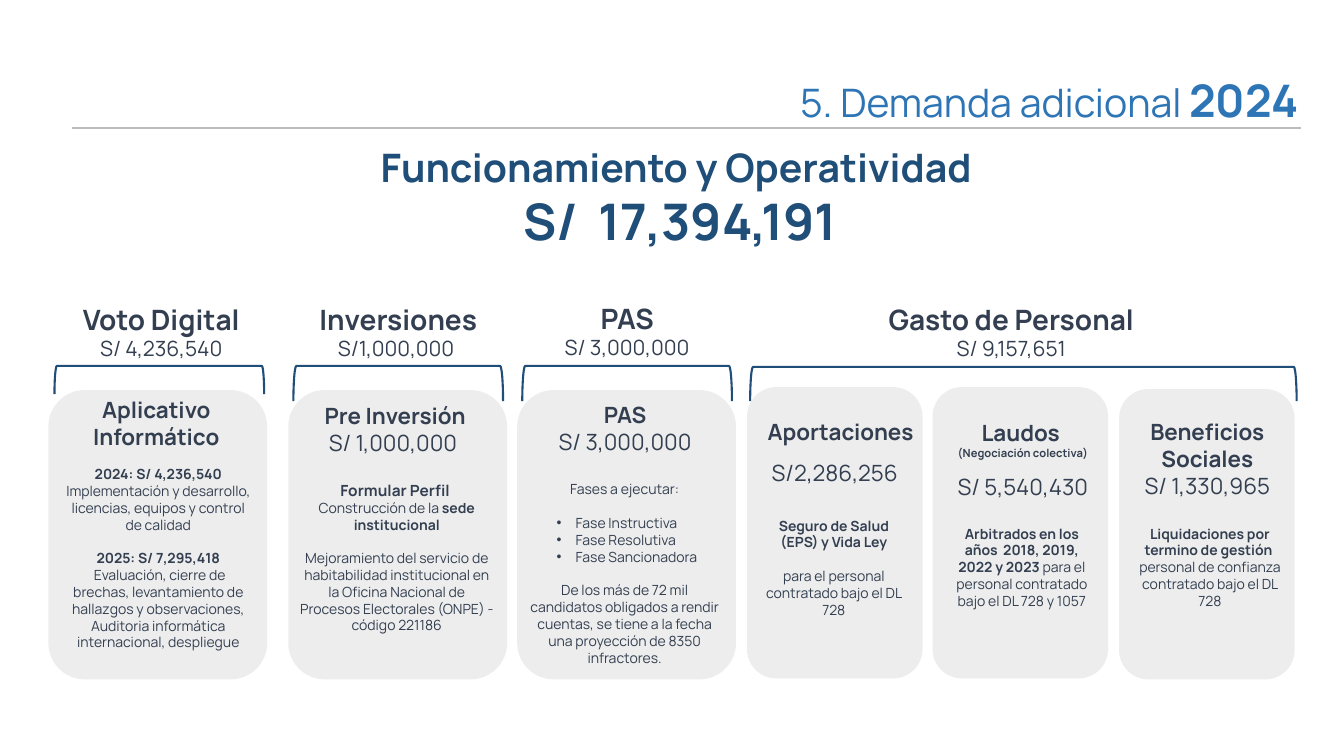
from pptx import Presentation
from pptx.dml.color import RGBColor
from pptx.enum.shapes import MSO_CONNECTOR, MSO_SHAPE
from pptx.enum.text import MSO_ANCHOR, MSO_AUTO_SIZE, PP_ALIGN
from pptx.oxml.ns import qn
from pptx.util import Inches, Pt
from lxml import etree

ROUNDED, BRACKET = MSO_SHAPE.ROUNDED_RECTANGLE, MSO_SHAPE.RIGHT_BRACKET
STRAIGHT = MSO_CONNECTOR.STRAIGHT
CENTER, RIGHT, BULLET = PP_ALIGN.CENTER, PP_ALIGN.RIGHT, PP_ALIGN.LEFT
TOP, NO_FIT = MSO_ANCHOR.TOP, MSO_AUTO_SIZE.NONE
FONT = "Manrope"
BLUE, NAVY, SLATE, CARD_GREY, RULE_GREY = "2E75B6", "1F4E79", "333F50", "EDEDED", "BCBCBC"

# Content. Paragraph: (alignment, space before, [(text, size, bold), ...])
TITLE = [(RIGHT, 0, [("5. Demanda adicional ", 28, False), ("2024", 32, True)])]
TOTAL = [(CENTER, 0, [("Funcionamiento y Operatividad ", 28, True)]),
         (CENTER, 0, [("S/  17,394,191", 36, True)])]

# Group: name, amount, text box, bracket box (left, top, width, height)
GROUPS = [
    ("Voto Digital", "S/ 4,236,540", (0.48, 2.95, 2.24, 0.69), (0.54, 3.63, 2.08, 0.28)),
    ("Inversiones", "S/1,000,000 ", (2.97, 2.95, 1.96, 0.69), (2.91, 3.63, 2.08, 0.35)),
    ("PAS", "S/ 3,000,000", (5.24, 2.94, 1.96, 0.69), (5.18, 3.63, 2.08, 0.35)),
    ("Gasto de Personal", "S/ 9,157,651", (8.06, 2.95, 3.94, 0.69), (7.44, 3.64, 5.42, 0.34)),
]

# Card: outline, heading box, heading, detail box, detail
CARDS = [
    ((0.48, 3.87, 2.17, 2.87),
     (0.49, 3.88, 2.12, 0.64), [(CENTER, 0, [("Aplicativo Informático", 16, True)])],
     (0.52, 4.57, 2.1, 2.12), [
         (CENTER, 0, [("2024: S/ 4,236,540", 10, True)]),
         (CENTER, 0, [("Implementación y desarrollo, licencias, equipos y control de calidad",
                       10, False)]),
         (CENTER, 12, [("2025: S/ 7,295,418", 10, True)]),
         (CENTER, 0, [(" Evaluación, cierre de brechas, levantamiento de hallazgos y "
                       "observaciones, Auditoria informática internacional, despliegue",
                       10, False)])]),
    ((2.86, 3.87, 2.17, 2.87),
     (2.86, 3.94, 2.12, 0.64), [(CENTER, 0, [("Pre Inversión", 16, True)]),
                                (CENTER, 0, [("S/ 1,000,000 ", 16, False)])],
     (2.86, 4.72, 2.15, 2.31), [
         (CENTER, 0, [("Formular Perfil ", 11, True)]),
         (CENTER, 0, [("Construcción de la ", 10, False), ("sede institucional", 10, True)]),
         (CENTER, 12, [("Mejoramiento del servicio de habitabilidad institucional en la Oficina "
                        "Nacional de Procesos Electorales (ONPE) - código 221186", 10, False)])]),
    ((5.13, 3.87, 2.17, 2.87),
     (5.14, 3.93, 2.12, 0.64), [(CENTER, 0, [("PAS", 16, True)]),
                                (CENTER, 0, [("S/ 3,000,000", 16, False)])],
     (5.12, 4.72, 2.15, 1.95), [
         (CENTER, 0, [("Fases a ejecutar:", 10, False)]),
         (BULLET, 12, [("Fase Instructiva", 10, False)]),
         (BULLET, 0, [("Fase Resolutiva", 10, False)]),
         (BULLET, 0, [("Fase Sancionadora", 10, False)]),
         (CENTER, 12, [("De los más de 72 mil candidatos obligados a rendir cuentas, se tiene a "
                        "la fecha una proyección de 8350 infractores.", 10, False)])]),
    ((7.41, 3.84, 1.74, 2.89),
     (7.4, 4.1, 1.76, 0.77), [(RIGHT, 0, [("Aportaciones", 16, True)]),
                              (CENTER, 10, [("S/2,286,256", 16, False)])],
     (7.47, 5.08, 1.6, 1.11), [
         (CENTER, 0, [("Seguro de Salud (EPS) y Vida Ley", 10, True)]),
         (CENTER, 12, [("para el personal contratado bajo el DL 728", 10, False)])]),
    ((9.25, 3.84, 1.74, 2.89),
     (9.32, 4.11, 1.65, 0.91), [(CENTER, 0, [("Laudos ", 16, True)]),
                                (CENTER, 0, [("(Negociación colectiva)", 8, True)]),
                                (CENTER, 10, [("S/ 5,540,430", 16, False)])],
     (9.35, 5.16, 1.57, 1.11), [
         (CENTER, 0, [("Arbitrados en los años  2018, 2019, 2022 y 2023 ", 10, True),
                      ("para el personal contratado bajo el DL 728 y 1057", 10, False)])]),
    ((11.1, 3.86, 1.74, 2.88),
     (11.09, 4.1, 1.77, 0.91), [(CENTER, 0, [("Beneficios Sociales", 16, True)]),
                                (CENTER, 0, [("S/ 1,330,965", 16, False)])],
     (11.13, 5.16, 1.74, 0.94), [
         (CENTER, 0, [("Liquidaciones por termino de gestión ", 10, True)]),
         (CENTER, 0, [("personal de confianza contratado bajo el DL 728", 10, False)])]),
]


def color(hex_code):
    return RGBColor.from_string(hex_code)


def set_marker(paragraph, bulleted):
    properties = paragraph._p.get_or_add_pPr()
    properties.set("marL", str(Inches(0.49) if bulleted else 0))
    properties.set("indent", str(Inches(-0.19) if bulleted else 0))
    marker = etree.SubElement(properties, qn("a:buChar" if bulleted else "a:buNone"))
    if bulleted:
        marker.set("char", "•")


def write(paragraphs, box, ink=SLATE, holder=None):
    """Write paragraphs in a new text box or in the given placeholder."""
    lengths = [Inches(value) for value in box]
    if holder is None:
        holder = slide.shapes.add_textbox(*lengths)
    else:
        holder.left, holder.top, holder.width, holder.height = lengths
    frame = holder.text_frame
    frame.word_wrap, frame.auto_size, frame.vertical_anchor = True, NO_FIT, TOP
    for index, (alignment, gap, runs) in enumerate(paragraphs):
        paragraph = frame.add_paragraph() if index else frame.paragraphs[0]
        set_marker(paragraph, alignment == BULLET)
        paragraph.alignment = alignment
        paragraph.space_before = Pt(gap)
        for words, size, bold in runs:
            run = paragraph.add_run()
            run.text = words
            run.font.name, run.font.size, run.font.bold = FONT, Pt(size), bold
            run.font.color.rgb = color(ink)


def add_card(box):
    card = slide.shapes.add_shape(ROUNDED, *[Inches(value) for value in box])
    card.shadow.inherit = False
    card.fill.solid()
    card.fill.fore_color.rgb = color(CARD_GREY)
    card.line.fill.background()


def add_bracket(left, top, width, height):
    # Turned a quarter left about its centre, so the sides swap
    bracket = slide.shapes.add_shape(
        BRACKET, Inches(left + (width - height) / 2), Inches(top + (height - width) / 2),
        Inches(height), Inches(width))
    bracket.rotation = 270
    bracket.shadow.inherit = False
    bracket.fill.background()
    bracket.line.color.rgb = color(NAVY)
    bracket.line.width = Pt(1.5)


deck = Presentation()
deck.slide_width, deck.slide_height = Inches(13.33), Inches(7.5)
slide = deck.slides.add_slide(deck.slide_layouts[1])
phases = slide.placeholders[1]

# Title, rule and total
write(TITLE, (6.31, 0.67, 6.67, 0.64), ink=BLUE, holder=slide.shapes.title)
rule = slide.shapes.add_connector(STRAIGHT, Inches(0.71), Inches(1.27), Inches(12.9), Inches(1.27))
rule.line.color.rgb = color(RULE_GREY)
rule.line.width = Pt(1.5)
etree.SubElement(rule._element.spPr, qn("a:effectLst"))
write(TOTAL, (2.36, 1.37, 8.77, 1.18), ink=NAVY)

# Cards; the one with a bulleted list uses the body placeholder, raised above its card
for outline, heading_box, heading, detail_box, detail in CARDS:
    add_card(outline)
    write(heading, heading_box)
    has_list = any(alignment == BULLET for alignment, _, _ in detail)
    if has_list:
        slide.shapes._spTree.append(phases._element)
    write(detail, detail_box, holder=phases if has_list else None)

# Spending groups over the cards
for name, amount, label_box, bracket_box in GROUPS:
    write([(CENTER, 0, [(name, 20, True)]), (CENTER, 0, [(amount, 15, False)])], label_box)
    add_bracket(*bracket_box)

deck.save("out.pptx")
